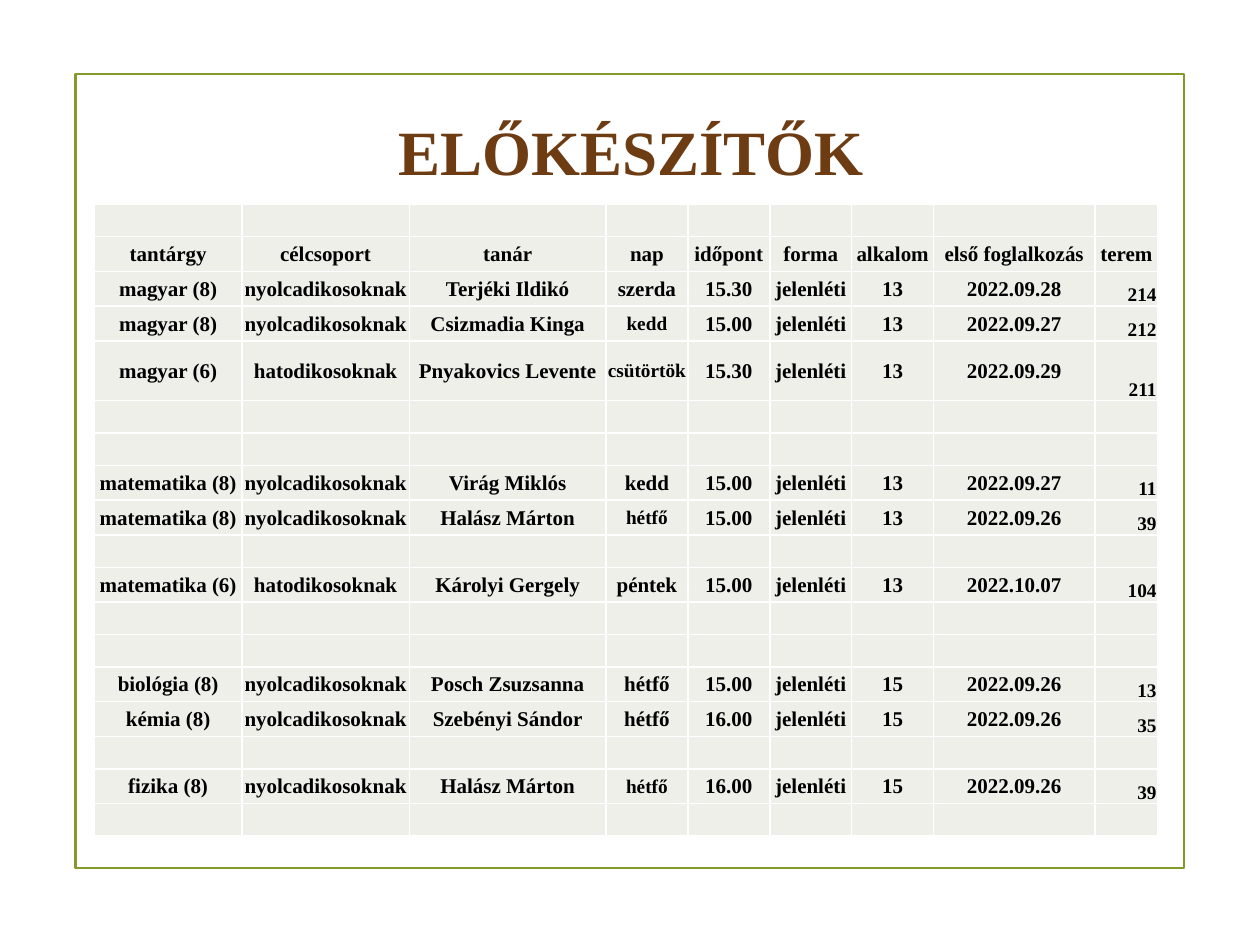
import lxml.etree
import pptx
import pptx.dml.color
import pptx.enum.shapes
import pptx.enum.text
import pptx.oxml.ns
import pptx.util

Inches = pptx.util.Inches
Pt = pptx.util.Pt
RGBColor = pptx.dml.color.RGBColor
ALIGN = pptx.enum.text.PP_ALIGN
ANCHOR = pptx.enum.text.MSO_ANCHOR
qn = pptx.oxml.ns.qn

GREEN = RGBColor(0x83, 0x99, 0x2A)
BROWN = RGBColor(0x6D, 0x3C, 0x13)
BLACK = RGBColor(0, 0, 0)
WHITE = RGBColor(0xFF, 0xFF, 0xFF)
PALE = RGBColor(0xED, 0xEF, 0xE8)

HEAD = ["tantárgy", "célcsoport", "tanár", "nap", "időpont", "forma",
        "alkalom", "első foglalkozás", "terem"]
EIGHTH, SIXTH = "nyolcadikosoknak", "hatodikosoknak"
FORM = "jelenléti"
BLANK = [""] * len(HEAD)
ROWS = [
    BLANK,
    HEAD,
    ["magyar (8)", EIGHTH, "Terjéki Ildikó", "szerda", "15.30", FORM, "13", "2022.09.28", "214"],
    ["magyar (8)", EIGHTH, "Csizmadia Kinga", "kedd", "15.00", FORM, "13", "2022.09.27", "212"],
    ["magyar (6)", SIXTH, "Pnyakovics Levente", "csütörtök", "15.30", FORM, "13", "2022.09.29", "211"],
    BLANK,
    BLANK,
    ["matematika (8)", EIGHTH, "Virág Miklós", "kedd", "15.00", FORM, "13", "2022.09.27", "11"],
    ["matematika (8)", EIGHTH, "Halász Márton", "hétfő", "15.00", FORM, "13", "2022.09.26", "39"],
    BLANK,
    ["matematika (6)", SIXTH, "Károlyi Gergely", "péntek", "15.00", FORM, "13", "2022.10.07", "104"],
    BLANK,
    BLANK,
    ["biológia (8)", EIGHTH, "Posch Zsuzsanna", "hétfő", "15.00", FORM, "15", "2022.09.26", "13"],
    ["kémia (8)", EIGHTH, "Szebényi Sándor", "hétfő", "16.00", FORM, "15", "2022.09.26", "35"],
    BLANK,
    ["fizika (8)", EIGHTH, "Halász Márton", "hétfő", "16.00", FORM, "15", "2022.09.26", "39"],
    BLANK,
]
WIDTHS = [1.17, 1.33, 1.56, 0.65, 0.65, 0.65, 0.65, 1.28, 0.5]
TALL = 4
DAY, ROOM = HEAD.index("nap"), HEAD.index("terem")
SMALL = {3, 4, 8, 16}


def write(text, frame, size=12, color=BLACK, align=ALIGN.CENTER, font="Times New Roman"):
    para = frame.paragraphs[0]
    para.alignment = align
    if not text:
        lxml.etree.SubElement(para._p, qn("a:endParaRPr"), sz=str(size * 100))
        return
    run = para.add_run()
    run.text = text
    run.font.name = font
    run.font.size = Pt(size)
    run.font.bold = True
    run.font.color.rgb = color


class Deck:
    def __init__(self, slide):
        self.slide = slide
        self.line = GREEN
        self.fill = PALE
        self.rule = WHITE

    def frame(self, *box):
        rect = self.slide.shapes.add_shape(
            pptx.enum.shapes.MSO_SHAPE.RECTANGLE, *map(Inches, box))
        rect.shadow.inherit = False
        rect.fill.background()
        rect.line.color.rgb = self.line
        rect.line.width = Pt(1.25)

    def title(self, text, *box):
        frame = self.slide.shapes.add_textbox(*map(Inches, box)).text_frame
        frame.word_wrap = True
        frame.vertical_anchor = ANCHOR.MIDDLE
        write(text, frame, size=36, color=BROWN)

    def border(self, cell):
        props = cell._tc.get_or_add_tcPr()
        for pos, side in enumerate(("lnL", "lnR", "lnT", "lnB")):
            edge = lxml.etree.Element(qn("a:" + side), w=str(Pt(1)))
            fill = lxml.etree.SubElement(edge, qn("a:solidFill"))
            lxml.etree.SubElement(fill, qn("a:srgbClr"), val=str(self.rule))
            props.insert(pos, edge)

    def cell(self, cell, text, **style):
        cell.margin_left = cell.margin_right = cell.margin_top = Inches(0.01)
        cell.margin_bottom = 0
        cell.fill.solid()
        cell.fill.fore_color.rgb = self.fill
        self.border(cell)
        write(text, cell.text_frame, **style)

    def table(self, rows, widths, *box):
        height = box[3]
        table = self.slide.shapes.add_table(
            len(rows), len(widths), *map(Inches, box)).table
        table.first_row = table.horz_banding = False
        for col, width in zip(table.columns, widths):
            col.width = Inches(width)
        tops = [0.48 if r == TALL else 0.28 if any(row) else 0.26
                for r, row in enumerate(rows)]
        for r, row in enumerate(rows):
            table.rows[r].height = Inches(tops[r] * height / sum(tops))
            for c, text in enumerate(row):
                room = c == ROOM and text.isdigit()
                small = room or (c == DAY and r in SMALL)
                cell = table.cell(r, c)
                cell.vertical_anchor = ANCHOR.BOTTOM if room else ANCHOR.MIDDLE
                self.cell(cell, text, size=11 if small else 12,
                          align=ALIGN.RIGHT if room else ALIGN.CENTER)


def main():
    show = pptx.Presentation()
    show.slide_width, show.slide_height = Inches(10), Inches(7.5)
    deck = Deck(show.slides.add_slide(show.slide_layouts[6]))
    deck.frame(0.6, 0.59, 8.8, 6.3)
    deck.title("ELŐKÉSZÍTŐK", 1.29, 1, 7.44, 0.39)
    deck.table(ROWS, WIDTHS, 0.75, 1.62, 8.43, 5.02)
    show.save("out.pptx")


if __name__ == "__main__":
    main()
